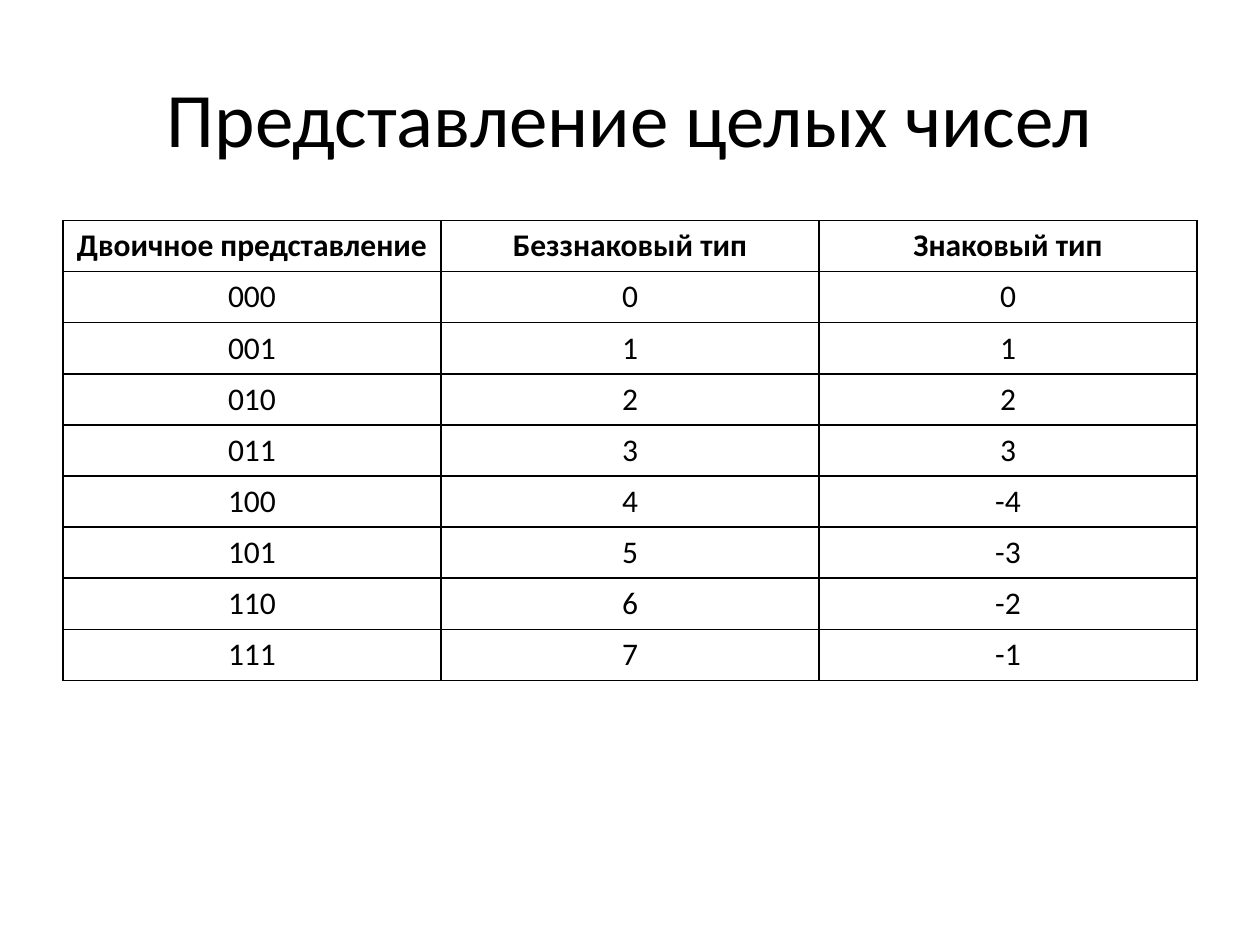
from dataclasses import dataclass

from lxml import etree
from pptx import Presentation
from pptx.dml.color import RGBColor
from pptx.enum.text import MSO_ANCHOR, PP_ALIGN
from pptx.oxml.ns import qn
from pptx.util import Inches, Pt

CENTER = PP_ALIGN.CENTER
MIDDLE = MSO_ANCHOR.MIDDLE
TITLE_ONLY = 5
BITS = 3


@dataclass(frozen=True)
class Theme:
    font: str = "Calibri"
    ink: str = "000000"
    paper: str = "FFFFFF"
    title_size: int = 44
    table_size: int = 18
    border_width: int = 1


def write_text(frame, text, *, font, size, color, bold=False, align=CENTER):
    para = frame.paragraphs[0]
    para.alignment = align
    span = para.add_run()
    span.text = text
    span.font.name = font
    span.font.size = Pt(size)
    span.font.bold = bold
    span.font.color.rgb = RGBColor.from_string(color)


class SlideBuilder:
    """Places elements by shares of the slide's width and height."""

    def __init__(self, deck, theme):
        self.deck = deck
        self.theme = theme
        self.slide = deck.slides.add_slide(deck.slide_layouts[TITLE_ONLY])
        background = self.slide.background.fill
        background.solid()
        background.fore_color.rgb = RGBColor.from_string(theme.paper)

    def area(self, left, top, width, height):
        across, down = self.deck.slide_width, self.deck.slide_height
        return (round(left * across), round(top * down),
                round(width * across), round(height * down))

    def title(self, text, *shares):
        box = self.slide.shapes.title
        box.left, box.top, box.width, box.height = self.area(*shares)
        box.text_frame.vertical_anchor = MIDDLE
        write_text(box.text_frame, text, font=self.theme.font,
                   size=self.theme.title_size, color=self.theme.ink)

    def table(self, rows, *shares):
        table = self.slide.shapes.add_table(
            len(rows), len(rows[0]), *self.area(*shares)).table
        table.horz_banding = False
        for row_index, row in enumerate(rows):
            for column_index, text in enumerate(row):
                cell = table.cell(row_index, column_index)
                self.border(cell)
                cell.fill.background()
                write_text(cell.text_frame, text, font=self.theme.font,
                           size=self.theme.table_size, color=self.theme.ink,
                           bold=row_index == 0)

    def border(self, cell):
        properties = cell._tc.get_or_add_tcPr()
        for side in ("a:lnL", "a:lnR", "a:lnT", "a:lnB"):
            line = etree.SubElement(properties, qn(side),
                                    w=str(Pt(self.theme.border_width)))
            fill = etree.SubElement(line, qn("a:solidFill"))
            etree.SubElement(fill, qn("a:srgbClr"), val=self.theme.ink)


def integer_rows(bits):
    """Each bit pattern with its unsigned and two's complement value."""
    count = 2 ** bits
    return [(f"{number:0{bits}b}", str(number),
             str(number if number < count // 2 else number - count))
            for number in range(count)]


def main():
    deck = Presentation()
    deck.slide_width, deck.slide_height = Inches(10), Inches(7.5)
    builder = SlideBuilder(deck, Theme())

    # Title
    builder.title("Представление целых чисел", 0.05, 0.04, 0.9, 1 / 6)

    # Table of integer values
    header = ("Двоичное представление", "Беззнаковый тип", "Знаковый тип")
    builder.table([header, *integer_rows(BITS)], 0.05, 7 / 30, 0.9, 3.65 / 7.5)

    deck.save("out.pptx")


if __name__ == "__main__":
    main()
